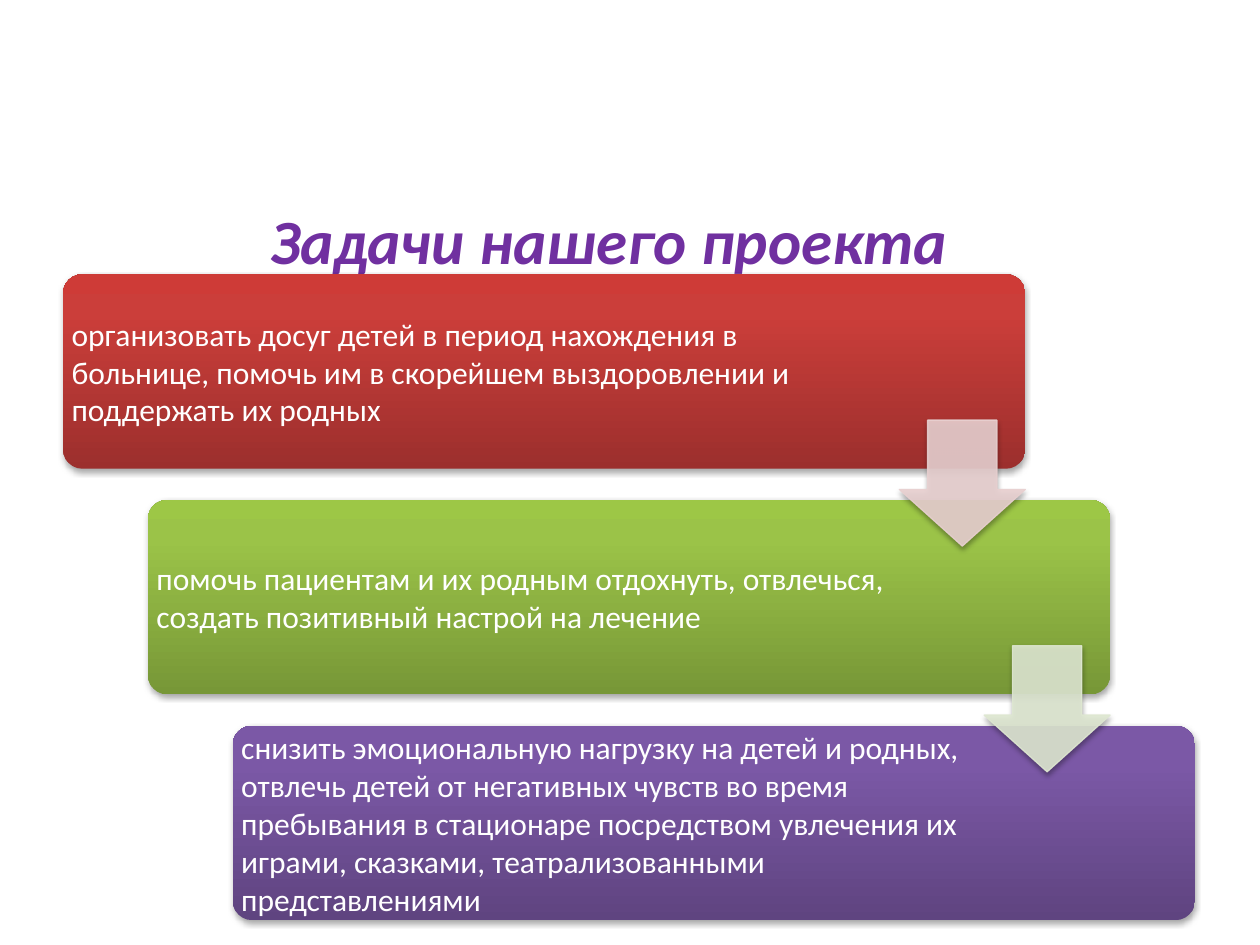
from lxml.etree import SubElement
from pptx import Presentation
from pptx.dml.color import RGBColor
from pptx.enum.shapes import MSO_SHAPE
from pptx.enum.text import MSO_ANCHOR, MSO_AUTO_SIZE, PP_ALIGN
from pptx.oxml.ns import qn
from pptx.util import Cm, Pt

CARDS = [
    ("организовать досуг детей в период нахождения в больнице, помочь им "
     "в скорейшем выздоровлении и поддержать их родных",
     ("9C2F2D", "CB3E3A", "CE3B37")),
    ("помочь пациентам и их родным отдохнуть, отвлечься, "
     "создать позитивный настрой на лечение",
     ("779737", "9BC348", "9DC746")),
    ("снизить эмоциональную нагрузку на детей и родных, отвлечь детей от "
     "негативных чувств во время пребывания в стационаре посредством "
     "увлечения их играми, сказками, театрализованными представлениями",
     ("5F4480", "7B58A6", "7C57A8")),
]
ARROWS = ["E8D0D0", "DEE7D1"]
STOPS = (0, 80, 100)
WIDE, HIGH = 19.4, 3.92      # card size
RIGHT, DOWN = 1.71, 4.55     # step from card to card
SIDE, DROP = 2.54, 2.94      # arrow size, its top below the card's top


def rgb(code):
    return RGBColor.from_string(code)


def node(root, tag, **attrs):
    """Append a child element with the given attributes."""
    return SubElement(root, qn(tag), {k: str(v) for k, v in attrs.items()})


def write(frame, text, size=18, color="FFFFFF", bold=False, italic=False,
          align=PP_ALIGN.LEFT, anchor=MSO_ANCHOR.MIDDLE, pads=None):
    frame.word_wrap = True
    frame.auto_size = MSO_AUTO_SIZE.NONE
    frame.vertical_anchor = anchor
    if pads:
        (frame.margin_left, frame.margin_top,
         frame.margin_right, frame.margin_bottom) = [Cm(p) for p in pads]
    para = frame.paragraphs[0]
    para.alignment = align
    para.space_before = Pt(0)
    run = para.add_run()
    run.text = text
    font = run.font
    font.name, font.size = "Calibri", Pt(size)
    font.bold, font.italic = bold, italic
    font.color.rgb = rgb(color)


def shade(shape):
    """Give the shape a soft shadow straight below it."""
    shape.shadow.inherit = False
    glow = node(shape._element.spPr.find(qn("a:effectLst")), "a:outerShdw",
                blurRad=Pt(3.1), dist=Pt(1.8), dir=5400000, rotWithShape=0)
    tone = node(glow, "a:srgbClr", val="000000")
    node(tone, "a:alpha", val=35000)


def blend(shape, tones):
    """Fill the shape with a gradient that runs from bottom to top."""
    shape.fill.gradient()
    shape.fill.gradient_angle = 90
    stops = shape._element.spPr.find(qn("a:gradFill")).find(qn("a:gsLst"))
    for old in list(stops):
        stops.remove(old)
    for pos, tone in zip(STOPS, tones):
        node(node(stops, "a:gs", pos=pos * 1000), "a:srgbClr", val=tone)


def title(slide, left, top, width, height):
    head = slide.shapes.title
    head.left, head.top = Cm(left), Cm(top)
    head.width, head.height = Cm(width), Cm(height)
    write(head.text_frame, "Задачи нашего проекта", size=36, color="7030A0",
          bold=True, italic=True, align=PP_ALIGN.CENTER,
          anchor=MSO_ANCHOR.BOTTOM)


def card(slide, left, top, text, tones):
    box = slide.shapes.add_shape(MSO_SHAPE.ROUNDED_RECTANGLE, Cm(left),
                                 Cm(top), Cm(WIDE), Cm(HIGH))
    box.adjustments[0] = 0.1
    blend(box, tones)
    box.line.fill.background()
    shade(box)
    write(box.text_frame, text, pads=(0.06, 0.06, 4.31, 0.06))


def arrow(slide, left, top, color):
    mark = slide.shapes.add_shape(MSO_SHAPE.DOWN_ARROW, Cm(left), Cm(top),
                                  Cm(SIDE), Cm(SIDE))
    mark.adjustments[0], mark.adjustments[1] = 0.55, 0.45
    mark.line.width = Pt(0.75)
    mark.line.fill.solid()
    for fill in (mark.fill, mark.line.fill):
        fill.solid()
        fill.fore_color.rgb = rgb(color)
    for tone in list(mark._element.spPr.iter(qn("a:srgbClr"))):
        node(tone, "a:alpha", val=90000)
    shade(mark)


def stairs(slide, left, top):
    """Place the cards as descending steps, joined by arrows."""
    for i, (text, tones) in enumerate(CARDS):
        card(slide, left + i * RIGHT, top + i * DOWN, text, tones)
    for i, color in enumerate(ARROWS):
        arrow(slide, left + i * RIGHT + WIDE - SIDE, top + i * DOWN + DROP,
              color)


def main():
    deck = Presentation()
    deck.slide_width, deck.slide_height = Cm(25.4), Cm(19.05)
    slide = deck.slides.add_slide(deck.slide_layouts[5])
    title(slide, 1.27, 4.11, 22.02, 1.6)
    stairs(slide, 1.27, 5.53)
    deck.save("out.pptx")


if __name__ == "__main__":
    main()
